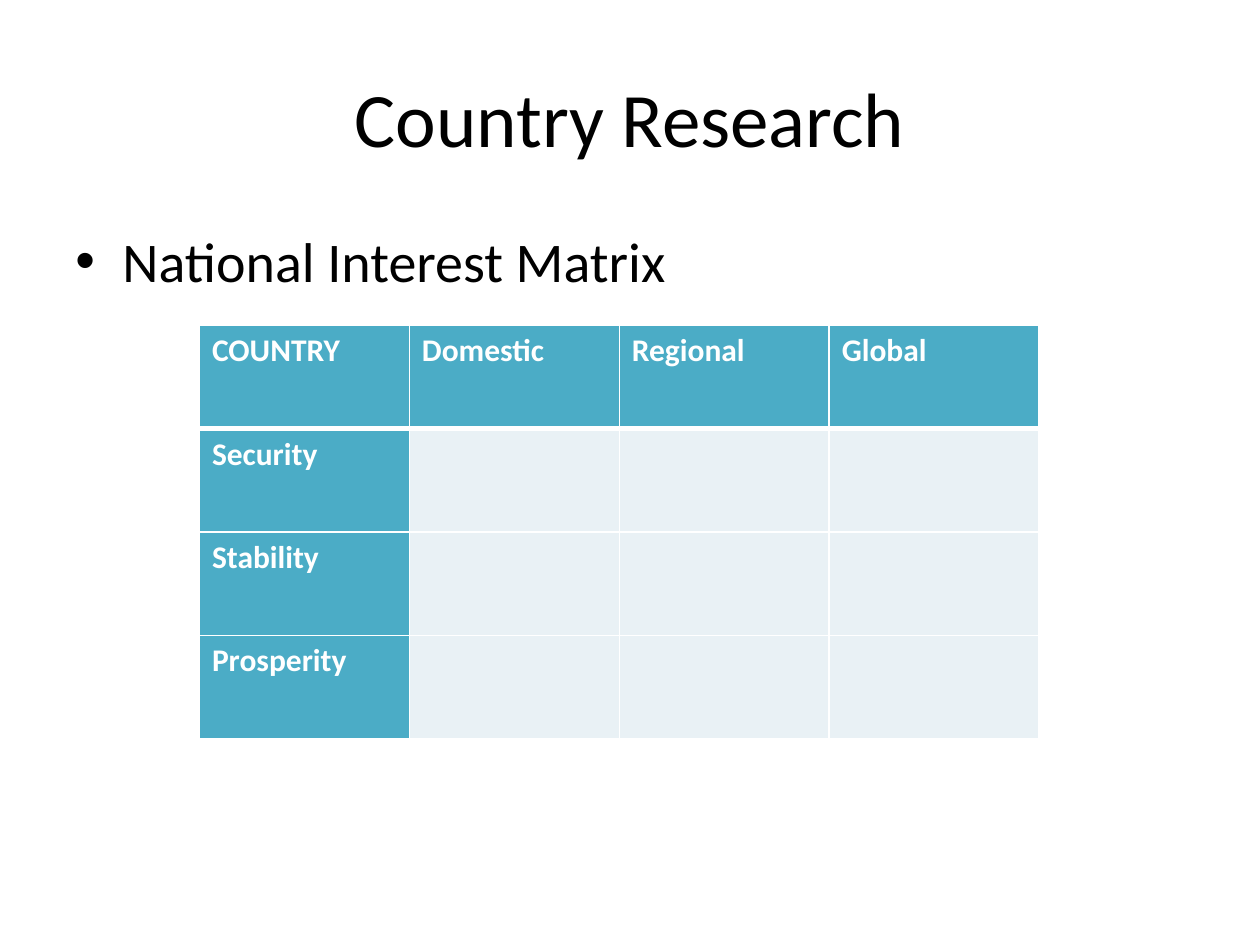
from dataclasses import dataclass

from lxml import etree
from pptx import Presentation
from pptx import util as u
from pptx.dml.color import RGBColor
from pptx.enum import text
from pptx.oxml.ns import qn


@dataclass(frozen=True)
class Theme:
    font: str = "Calibri"
    ink: str = "000000"
    paper: str = "FFFFFF"
    accent: str = "4BACC6"
    tint: str = "E9F1F5"
    title_size: int = 44
    body_size: int = 32
    table_size: int = 18
    rule: int = 1
    header_rule: int = 3


THEME = Theme()
MATRIX = [
    ["COUNTRY", "Domestic", "Regional", "Global"],
    ["Security", "", "", ""],
    ["Stability", "", "", ""],
    ["Prosperity", "", "", ""],
]


def style(paragraph, size, color, bold=False):
    font = paragraph.font
    font.name, font.size, font.bold = THEME.font, u.Pt(size), bold
    font.color.rgb = RGBColor.from_string(color)


def add_text(slide, words, top, height, size, anchor):
    box = slide.shapes.add_textbox(u.Cm(1.27), u.Cm(top), u.Cm(22.86), u.Cm(height))
    frame = box.text_frame
    frame.word_wrap = True
    frame.vertical_anchor = anchor
    paragraph = frame.paragraphs[0]
    paragraph.text = words
    style(paragraph, size, THEME.ink)
    return paragraph


def add_bullet(paragraph):
    """Give the paragraph a round bullet and a hanging indent."""
    properties = paragraph._p.get_or_add_pPr()
    indent = u.Cm(0.95)
    properties.set("marL", str(indent))
    properties.set("indent", str(-indent))
    bullet_font = etree.Element(qn("a:buFont"), typeface="Arial")
    bullet = etree.Element(qn("a:buChar"), char="•")
    properties.insert(0, bullet_font)
    properties.insert(1, bullet)


def set_borders(cell, row):
    """Rule the cell in white, more heavily beneath the header row."""
    widths = {
        "L": THEME.rule,
        "R": THEME.rule,
        "T": THEME.header_rule if row == 1 else THEME.rule,
        "B": THEME.header_rule if row == 0 else THEME.rule,
    }
    properties = cell._tc.get_or_add_tcPr()
    for side, width in widths.items():
        line = etree.SubElement(properties, qn(f"a:ln{side}"), w=str(u.Pt(width)))
        fill = etree.SubElement(line, qn("a:solidFill"))
        etree.SubElement(fill, qn("a:srgbClr"), val=THEME.paper)


def add_matrix(slide, rows):
    table = slide.shapes.add_table(
        len(rows), len(rows[0]), u.Cm(4.02), u.Cm(6.56), u.Cm(16.93), u.Cm(8.33)
    ).table
    table.first_col = True
    for r, labels in enumerate(rows):
        for c, label in enumerate(labels):
            cell = table.cell(r, c)
            set_borders(cell, r)
            heading = r == 0 or c == 0
            cell.fill.solid()
            cell.fill.fore_color.rgb = RGBColor.from_string(
                THEME.accent if heading else THEME.tint
            )
            cell.text = label
            style(
                cell.text_frame.paragraphs[0],
                THEME.table_size,
                THEME.paper if heading else THEME.ink,
                bold=heading,
            )


def main():
    deck = Presentation()
    deck.slide_width, deck.slide_height = u.Cm(25.4), u.Cm(19.05)
    slide = deck.slides.add_slide(deck.slide_layouts[6])

    title = add_text(slide, "Country Research", 0.76, 3.18, THEME.title_size,
                     text.MSO_ANCHOR.MIDDLE)
    title.alignment = text.PP_ALIGN.CENTER
    topic = add_text(slide, "National Interest Matrix", 4.45, 12.57, THEME.body_size,
                     text.MSO_ANCHOR.TOP)
    add_bullet(topic)
    add_matrix(slide, MATRIX)

    deck.save("out.pptx")


if __name__ == "__main__":
    main()
